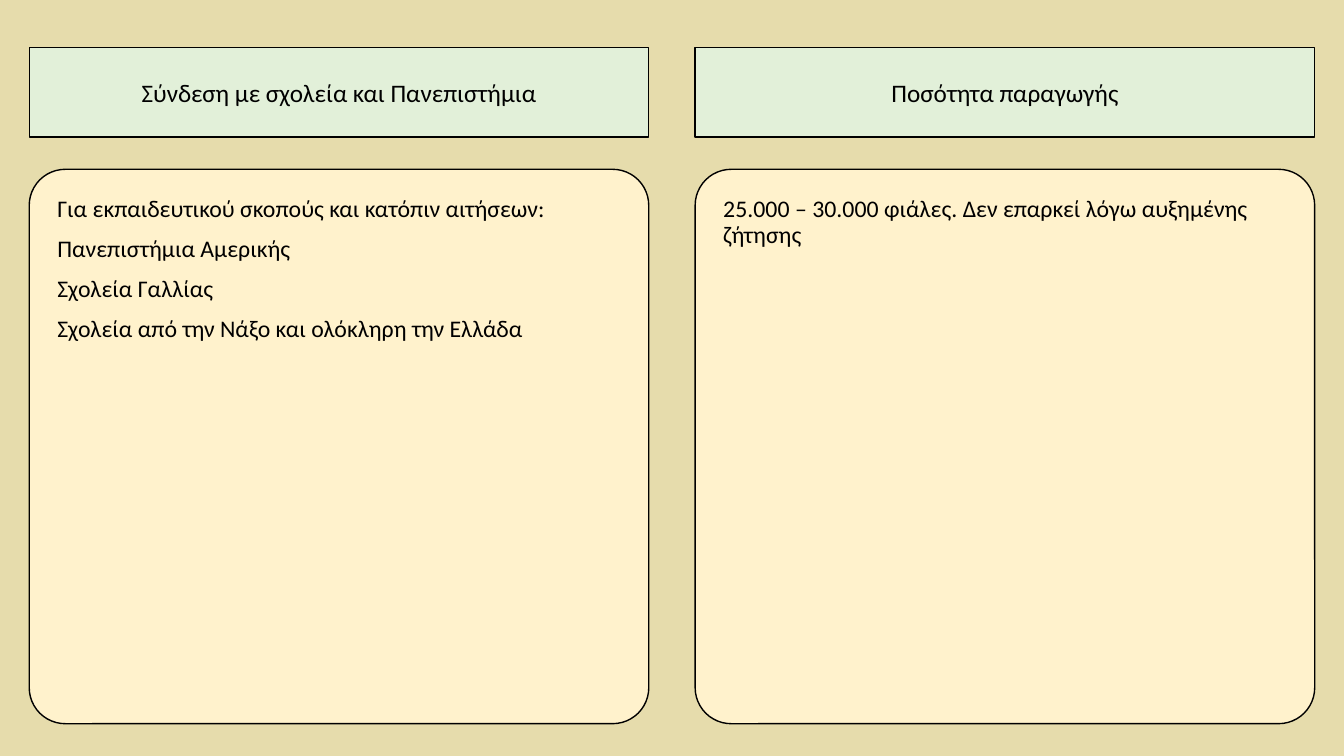
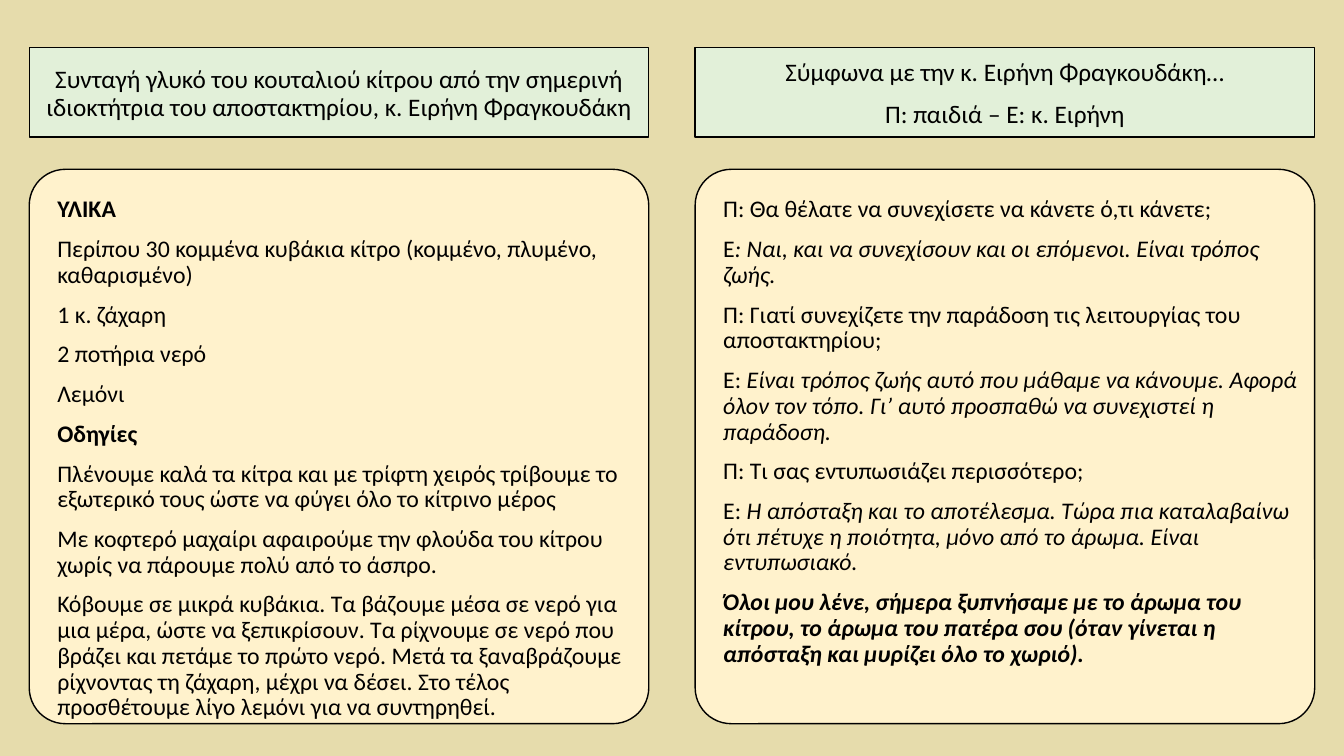
import pptx
import pptx.dml.color
import pptx.enum.shapes
import pptx.enum.text
import pptx.util

COLOURS = {
    "background": "E6DCAC",
    "card": "FFF2CC",
    "heading": "E2F0D9",
    "ink": "000000",
}
ROWS = {
    "heading": (0.47, 0.89),
    "heading_text": (0.69, 0.49),
    "card": (1.68, 5.5),
    "card_text": (1.91, 4.93),
}
SHAPES = pptx.enum.shapes.MSO_SHAPE
ALIGN = pptx.enum.text.PP_ALIGN
ANCHOR = pptx.enum.text.MSO_ANCHOR

BOLD = {"bold": True}
ITALIC = {"italic": True}
BOLD_ITALIC = {"bold": True, "italic": True}

SLIDES = [
    [
        (
            ["Σύνδεση με σχολεία και Πανεπιστήμια"],
            [
                "Για εκπαιδευτικού σκοπούς και κατόπιν αιτήσεων:",
                "Πανεπιστήμια Αμερικής",
                "Σχολεία Γαλλίας",
                "Σχολεία από την Νάξο και ολόκληρη την Ελλάδα",
            ],
        ),
        (
            ["Ποσότητα παραγωγής"],
            ["25.000 – 30.000 φιάλες. Δεν επαρκεί λόγω αυξημένης ζήτησης"],
        ),
    ],
    [
        (
            ["Συνταγή γλυκό του κουταλιού κίτρου από την σημερινή "
             "ιδιοκτήτρια του αποστακτηρίου, κ. Ειρήνη Φραγκουδάκη"],
            [
                [("ΥΛΙΚΑ", BOLD)],
                "Περίπου 30 κομμένα κυβάκια κίτρο (κομμένο, πλυμένο, καθαρισμένο)",
                "1 κ. ζάχαρη",
                "2 ποτήρια νερό",
                "Λεμόνι",
                [("Οδηγίες", BOLD)],
                "Πλένουμε καλά τα κίτρα και με τρίφτη χειρός τρίβουμε το "
                "εξωτερικό τους ώστε να φύγει όλο το κίτρινο μέρος",
                "Με κοφτερό μαχαίρι αφαιρούμε την φλούδα του κίτρου "
                "χωρίς να πάρουμε πολύ από το άσπρο.",
                "Κόβουμε σε μικρά κυβάκια. Τα βάζουμε μέσα σε νερό για μια μέρα, "
                "ώστε να ξεπικρίσουν. Τα ρίχνουμε σε νερό που βράζει και πετάμε "
                "το πρώτο νερό. Μετά τα ξαναβράζουμε ρίχνοντας τη ζάχαρη, μέχρι "
                "να δέσει. Στο τέλος προσθέτουμε λίγο λεμόνι για να συντηρηθεί.",
            ],
        ),
        (
            ["Σύμφωνα με την κ. Ειρήνη Φραγκουδάκη…", "Π: παιδιά – Ε: κ. Ειρήνη"],
            [
                "Π: Θα θέλατε να συνεχίσετε να κάνετε ό,τι κάνετε;",
                [("Ε", {}),
                 (": Ναι, και να συνεχίσουν και οι επόμενοι. Είναι τρόπος ζωής.", ITALIC)],
                "Π: Γιατί συνεχίζετε την παράδοση τις λειτουργίας του αποστακτηρίου;",
                [("Ε: ", {}),
                 ("Είναι τρόπος ζωής αυτό που μάθαμε να κάνουμε. Αφορά όλον τον "
                  "τόπο. Γι’ αυτό προσπαθώ να συνεχιστεί η παράδοση.", ITALIC)],
                "Π: Τι σας εντυπωσιάζει περισσότερο;",
                [("Ε: ", {}),
                 ("Η απόσταξη και το αποτέλεσμα. Τώρα πια καταλαβαίνω ότι πέτυχε "
                  "η ποιότητα, μόνο από το άρωμα. Είναι εντυπωσιακό.", ITALIC)],
                [("Όλοι μου λένε, σήμερα ξυπνήσαμε με το άρωμα του κίτρου, το άρωμα "
                  "του πατέρα σου (όταν γίνεται η απόσταξη και μυρίζει όλο το "
                  "χωριό).", BOLD_ITALIC)],
            ],
        ),
    ],
]


def rgb(name):
    return pptx.dml.color.RGBColor.from_string(COLOURS[name])


def write(frame, paragraphs, size=17, align=ALIGN.LEFT, anchor=ANCHOR.TOP):
    frame.word_wrap = True
    frame.vertical_anchor = anchor
    for index, content in enumerate(paragraphs):
        paragraph = frame.add_paragraph() if index else frame.paragraphs[0]
        paragraph.alignment = align
        paragraph.line_spacing = 0.9
        paragraph.space_before = pptx.util.Pt(10 if index else 0)
        pieces = [(content, {})] if isinstance(content, str) else content
        for text, emphasis in pieces:
            run = paragraph.add_run()
            run.text = text
            run.font.name = "Calibri"
            run.font.size = pptx.util.Pt(size)
            run.font.color.rgb = rgb("ink")
            run.font.bold = emphasis.get("bold")
            run.font.italic = emphasis.get("italic")


class Deck:
    width, height = 13.33, 7.5
    margin, gutter, columns = 0.29, 0.46, 2
    text_indent = 0.18

    def __init__(self):
        self.presentation = pptx.Presentation()
        self.presentation.slide_width = pptx.util.Inches(self.width)
        self.presentation.slide_height = pptx.util.Inches(self.height)
        self.slide = None

    def new_slide(self):
        blank = self.presentation.slide_layouts[6]
        self.slide = self.presentation.slides.add_slide(blank)
        backdrop = self.slide.background.fill
        backdrop.solid()
        backdrop.fore_color.rgb = rgb("background")

    def cell(self, column, row, indent=0):
        gaps = self.gutter * (self.columns - 1)
        span = (self.width - 2 * self.margin - gaps) / self.columns
        left = self.margin + column * (span + self.gutter)
        top, height = ROWS[row]
        return [pptx.util.Inches(length)
                for length in (left + indent, top, span - indent, height)]

    def panel(self, kind, column, row):
        panel = self.slide.shapes.add_shape(kind, *self.cell(column, row))
        panel.shadow.inherit = False
        panel.fill.solid()
        panel.fill.fore_color.rgb = rgb(row)
        panel.line.color.rgb = rgb("ink")
        panel.line.width = pptx.util.Pt(1)
        return panel

    def text(self, paragraphs, column, row, indent=0, **style):
        box = self.slide.shapes.add_textbox(*self.cell(column, row, indent))
        write(box.text_frame, paragraphs, **style)

    def card(self, column, paragraphs):
        card = self.panel(SHAPES.ROUNDED_RECTANGLE, column, "card")
        card.adjustments[0] = 0.065
        self.text(paragraphs, column, "card_text", self.text_indent)

    def heading(self, column, paragraphs):
        self.panel(SHAPES.RECTANGLE, column, "heading")
        self.text(paragraphs, column, "heading_text",
                  size=18, align=ALIGN.CENTER, anchor=ANCHOR.MIDDLE)


def main():
    deck = Deck()
    for topics in SLIDES:
        deck.new_slide()
        for column, (heading, body) in enumerate(topics):
            deck.card(column, body)
            deck.heading(column, heading)
    deck.presentation.save("out.pptx")


if __name__ == "__main__":
    main()
